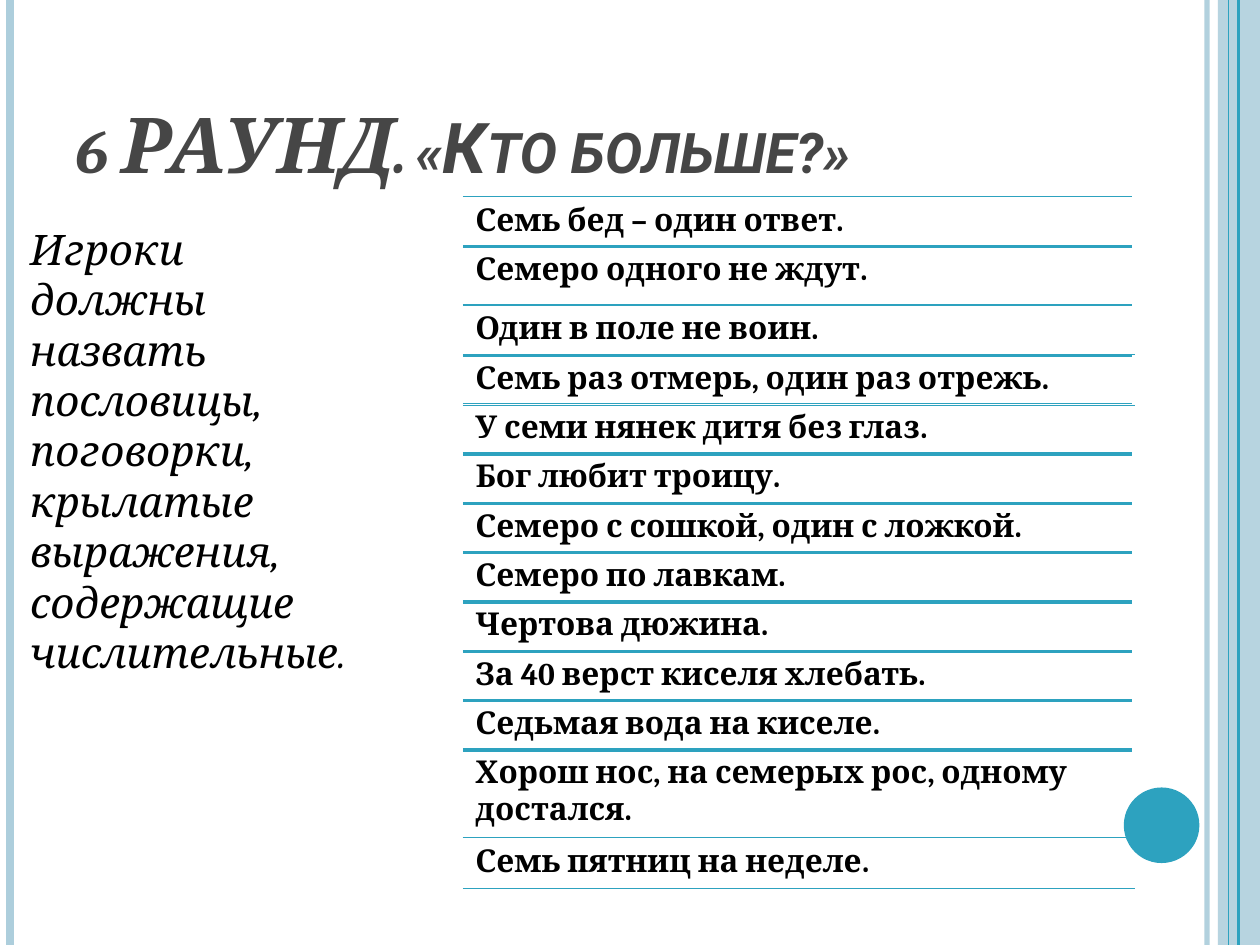
"""Build the quiz slide with a list of number proverbs."""
from lxml.etree import SubElement
from pptx import Presentation
from pptx.dml.color import RGBColor
from pptx.enum.shapes import MSO_CONNECTOR, MSO_SHAPE
from pptx.enum.text import MSO_ANCHOR, MSO_AUTO_SIZE, PP_ALIGN
from pptx.oxml import parse_xml
from pptx.oxml.ns import nsdecls, qn
from pptx.util import Pt

TEAL, PALE, GRAY, BLACK = "2DA2BF", "ADCEDC", "464646", "000000"


def color(value):
    """Turn a hex string into a colour."""
    return RGBColor.from_string(value)


def write(para, text, size, font="Cambria", fill=BLACK, bold=False, italic=False, caps="none"):
    """Add a formatted span of text to a paragraph."""
    span = para.add_run()
    span.text = text
    span.font.size = Pt(size)
    span.font.name = font
    span.font.bold = bold
    span.font.italic = italic
    span.font.color.rgb = color(fill)
    span.font._element.set("cap", caps)


deck = Presentation()
deck.slide_width, deck.slide_height = Pt(720), Pt(540)
page = deck.slides.add_slide(deck.slide_layouts[1])

title = page.shapes.title
title.left, title.top, title.width, title.height = Pt(36), Pt(21.6), Pt(588), Pt(90)
title.text_frame.auto_size = MSO_AUTO_SIZE.NONE
title.text_frame.vertical_anchor = MSO_ANCHOR.BOTTOM
heading = title.text_frame.paragraphs[0]
heading.alignment = PP_ALIGN.LEFT
write(heading, "6 РАУНД.", 44, fill=GRAY, bold=True, italic=True, caps="small")
write(heading, " ", 30, fill=GRAY, caps="small")
write(heading, "«Кто больше?»", 40, font="Roboto", fill=GRAY, bold=True, italic=True, caps="small")

body = page.placeholders[1]
body.left, body.top, body.width, body.height = Pt(10), Pt(124), Pt(198), Pt(384)
body.text_frame.auto_size = MSO_AUTO_SIZE.NONE
task = body.text_frame.paragraphs[0]
task.space_before = Pt(6)
settings = task._p.get_or_add_pPr()
settings.set("marL", "0")
settings.set("indent", "0")
SubElement(settings, qn("a:buNone"))
write(task, "Игроки должны назвать пословицы, поговорки, крылатые выражения, "
            "содержащие числительные.", 24, italic=True)

stripes = [(689.8, PALE, 3, 93), (5.8, PALE, 4.5, 100), (707.8, TEAL, 1.5, 100), (702, TEAL, 0.75, 100)]
panels = [(MSO_SHAPE.RECTANGLE, 696, 0, 24, 540, PALE, 87),
          (MSO_SHAPE.OVAL, 642.2, 450, 43.2, 43.2, TEAL, 100)]
for kind, left, top, width, height, fill, opacity in panels:
    panel = page.shapes.add_shape(kind, Pt(left), Pt(top), Pt(width), Pt(height))
    panel.shadow.inherit = False
    panel.fill.solid()
    panel.fill.fore_color.rgb = color(fill)
    panel.line.fill.background()
    SubElement(panel._element.spPr.find(".//" + qn("a:srgbClr")), qn("a:alpha"), val=str(opacity * 1000))
for left, fill, weight, opacity in stripes:
    stripe = page.shapes.add_connector(MSO_CONNECTOR.STRAIGHT, Pt(left), Pt(0), Pt(left), Pt(540))
    stripe.line.color.rgb = color(fill)
    stripe.line.width = Pt(weight)
    SubElement(stripe._element.spPr.find(".//" + qn("a:srgbClr")), qn("a:alpha"), val=str(opacity * 1000))
    SubElement(stripe._element.spPr, qn("a:effectLst"))

ROW, STEP, WIDTH, WIDE = 29.2, 28.2, 382.3, 384.3
proverbs = [
    ("Семь бед – один ответ.", ROW, STEP, WIDTH),
    ("Семеро одного не ждут.", 33.8, 33.8, WIDTH),
    ("Один в поле не воин.", ROW, STEP, WIDTH),
    ("Семь раз отмерь, один раз отрежь.", ROW, STEP, WIDE),
    ("У семи нянек дитя без глаз.", ROW, STEP, WIDTH),
    ("Бог любит троицу.", ROW, STEP, WIDTH),
    ("Семеро с сошкой, один с ложкой.", ROW, STEP, WIDTH),
    ("Семеро по лавкам.", ROW, STEP, WIDTH),
    ("Чертова дюжина.", ROW, STEP, WIDTH),
    ("За 40 верст киселя хлебать.", ROW, STEP, WIDTH),
    ("Седьмая вода на киселе.", ROW, STEP, WIDTH),
    ("Хорош нос, на семерых рос, одному достался.", 50.4, 50.4, WIDTH),
    ("Семь пятниц на неделе.", ROW, STEP, WIDE),
]
top = 112.3
for proverb, height, step, width in proverbs:
    table = page.shapes.add_table(1, 1, Pt(264.5), Pt(top), Pt(width), Pt(height)).table
    table.first_row = table.horz_banding = False
    cell = table.cell(0, 0)
    write(cell.text_frame.paragraphs[0], proverb, 18, bold=True)
    borders = cell._tc.get_or_add_tcPr()
    for side in "LRTB":
        paint = "<a:noFill/>"
        if side in "TB":
            paint = f'<a:solidFill><a:srgbClr val="{TEAL}"/></a:solidFill>'
        borders.append(parse_xml(f'<a:ln{side} {nsdecls("a")} w="{Pt(1)}">{paint}</a:ln{side}>'))
    cell.fill.background()
    top += step

deck.save("out.pptx")
